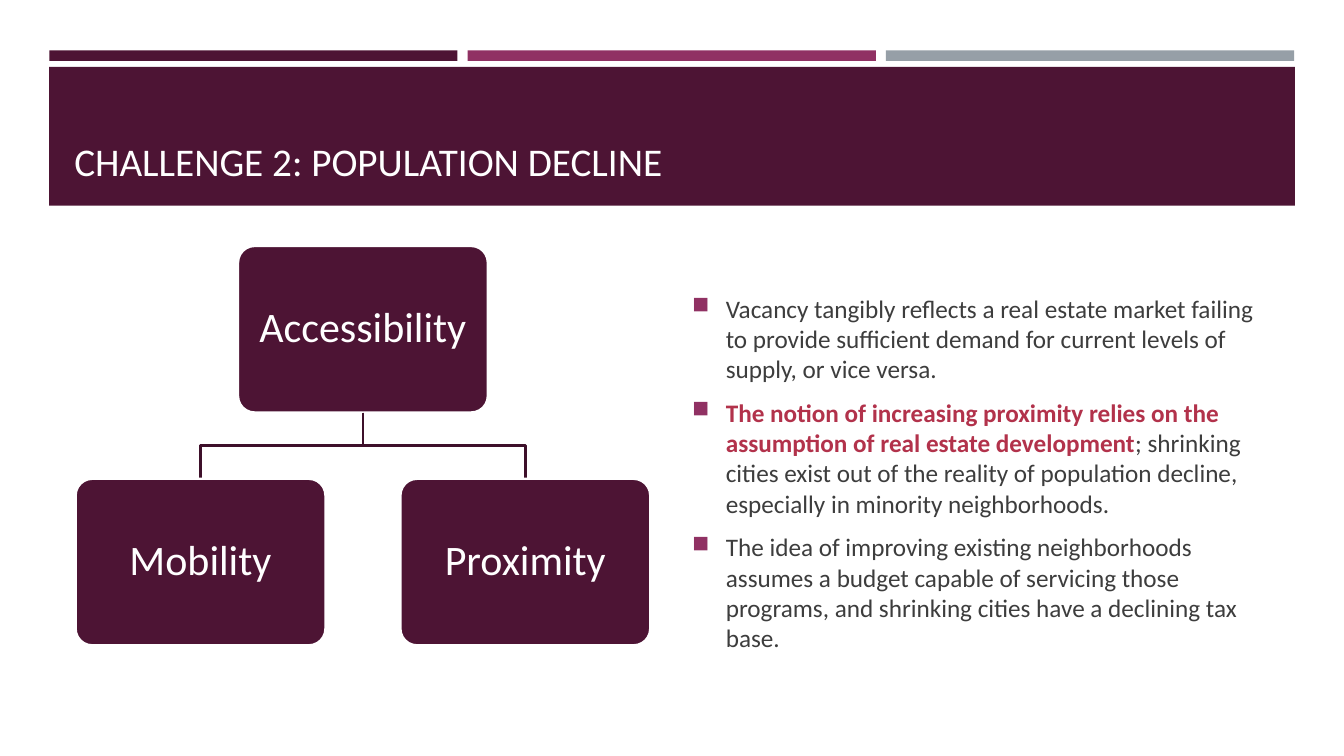
"""Build the population decline slide with its accessibility hierarchy."""

from dataclasses import dataclass

import pptx
import pptx.dml.color
import pptx.enum.shapes
import pptx.enum.text
import pptx.oxml
import pptx.oxml.ns
import pptx.shapes.autoshape
import pptx.slide
import pptx.text.text
import pptx.util

Pt = pptx.util.Pt
Align = pptx.enum.text.PP_ALIGN
Anchor = pptx.enum.text.MSO_ANCHOR
Preset = pptx.enum.shapes.MSO_SHAPE


@dataclass(frozen=True)
class Theme:
    font: str = "Calibri"
    plum: str = "4D1434"
    magenta: str = "903163"
    gray: str = "969FA7"
    link: str = "3E102A"
    white: str = "FFFFFF"
    body: str = "3D3D3D"
    emphasis: str = "B2324B"
    title_size: float = 28
    node_size: float = 30
    body_size: float = 18
    outline: float = 1.75


@dataclass(frozen=True)
class Box:
    left: float
    top: float
    width: float
    height: float

    @property
    def center(self) -> float:
        return self.left + self.width / 2

    @property
    def bottom(self) -> float:
        return self.top + self.height

    def lengths(self) -> tuple[int, ...]:
        return Pt(self.left), Pt(self.top), Pt(self.width), Pt(self.height)


@dataclass(frozen=True)
class Node:
    label: str
    left: float
    top: float

    @property
    def box(self) -> Box:
        return Box(self.left, self.top, 178.5, 119)


@dataclass(frozen=True)
class Phrase:
    text: str
    emphasized: bool = False


THEME = Theme()
BAR_STEP = 301.5 - 2.7
ACCESSIBILITY = Node("Accessibility", 170, 175.7)
CHILDREN = (Node("Mobility", 54, 342), Node("Proximity", 286, 342))
ARGUMENTS = (
    (Phrase("Vacancy tangibly reflects a real estate market failing to provide "
            "sufficient demand for current levels of supply, or vice versa."),),
    (Phrase("The notion of increasing proximity relies on the assumption of "
            "real estate development", True),
     Phrase("; shrinking cities exist out of the reality of population decline, "
            "especially in minority neighborhoods.")),
    (Phrase("The idea of improving existing neighborhoods assumes a budget capable "
            "of servicing those programs, and shrinking cities have a declining "
            "tax base."),),
)


def rgb(color: str) -> pptx.dml.color.RGBColor:
    """Convert a hex colour."""
    return pptx.dml.color.RGBColor.from_string(color)


def add_run(paragraph: pptx.text.text._Paragraph, text: str, size: float,
            color: str, bold: bool = False) -> None:
    """Append one styled run."""
    run = paragraph.add_run()
    run.text = text
    run.font.name = THEME.font
    run.font.size = Pt(size)
    run.font.bold = bold
    run.font.color.rgb = rgb(color)


def add_block(slide: pptx.slide.Slide, preset: Preset, box: Box,
              color: str) -> pptx.shapes.autoshape.Shape:
    """Add a filled shape without outline or shadow."""
    block = slide.shapes.add_shape(preset, *box.lengths())
    block.shadow.inherit = False
    block.fill.solid()
    block.fill.fore_color.rgb = rgb(color)
    block.line.fill.background()
    return block


def add_text_area(slide: pptx.slide.Slide, box: Box,
                  anchor: Anchor) -> pptx.text.text.TextFrame:
    """Add a wrapping text box and return its frame."""
    frame = slide.shapes.add_textbox(*box.lengths()).text_frame
    frame.word_wrap = True
    frame.vertical_anchor = anchor
    return frame


def add_node(slide: pptx.slide.Slide, node: Node) -> None:
    """Add a labelled rounded box of the hierarchy."""
    block = add_block(slide, Preset.ROUNDED_RECTANGLE, node.box, THEME.plum)
    block.adjustments[0] = 0.1
    block.line.color.rgb = rgb(THEME.white)
    block.line.width = Pt(THEME.outline)
    frame = block.text_frame
    frame.word_wrap = True
    frame.vertical_anchor = Anchor.MIDDLE
    frame.margin_left = frame.margin_right = Pt(8.6)
    frame.margin_top = frame.margin_bottom = Pt(8.6)
    label = frame.paragraphs[0]
    label.alignment = Align.CENTER
    label.line_spacing = 0.9
    add_run(label, node.label, THEME.node_size, THEME.white)


def add_branch(slide: pptx.slide.Slide, parent: Box, child: Box) -> None:
    """Draw the bent line from a parent down to a child."""
    middle = (parent.bottom + child.top) / 2
    builder = slide.shapes.build_freeform(Pt(parent.center), Pt(parent.bottom))
    corners = ((parent.center, middle), (child.center, middle),
               (child.center, child.top))
    builder.add_line_segments([(Pt(x), Pt(y)) for x, y in corners], close=False)
    branch = builder.convert_to_shape()
    branch.shadow.inherit = False
    branch.fill.background()
    branch.line.color.rgb = rgb(THEME.link)
    branch.line.width = Pt(THEME.outline)


def add_bullet(paragraph: pptx.text.text._Paragraph) -> None:
    """Give a paragraph a coloured square bullet with a hanging indent."""
    properties = paragraph._p.get_or_add_pPr()
    properties.set("marL", str(Pt(24)))
    properties.set("indent", str(Pt(-24)))
    namespace = pptx.oxml.ns.nsdecls("a")
    for markup in (
        f'<a:buClr {namespace}><a:srgbClr val="{THEME.magenta}"/></a:buClr>',
        f'<a:buSzPct {namespace} val="92000"/>',
        f'<a:buChar {namespace} char="■"/>',
    ):
        properties.append(pptx.oxml.parse_xml(markup))


def add_arguments(slide: pptx.slide.Slide) -> None:
    """Add the bulleted arguments."""
    frame = add_text_area(slide, Box(487.4, 167.8, 427, 340), Anchor.MIDDLE)
    for index, phrases in enumerate(ARGUMENTS):
        argument = frame.add_paragraph() if index else frame.paragraphs[0]
        argument.space_before = Pt(3.6)
        argument.space_after = Pt(6)
        add_bullet(argument)
        for phrase in phrases:
            color = THEME.emphasis if phrase.emphasized else THEME.body
            add_run(argument, phrase.text, THEME.body_size, color, phrase.emphasized)


def main() -> None:
    """Assemble and save the slide."""
    deck = pptx.Presentation()
    deck.slide_width, deck.slide_height = Pt(960), Pt(540)
    slide = deck.slides.add_slide(deck.slide_layouts[6])
    for index, color in enumerate((THEME.plum, THEME.magenta, THEME.gray)):
        bar = Box(35.2 + index * BAR_STEP, 36, 291.6, 7.5)
        add_block(slide, Preset.RECTANGLE, bar, color)
    add_block(slide, Preset.RECTANGLE, Box(35.2, 47.7, 889.8, 99.2), THEME.plum)
    title = add_text_area(slide, Box(46, 57.6, 868.4, 77.8), Anchor.BOTTOM)
    add_run(title.paragraphs[0], "CHALLENGE 2: POPULATION DECLINE",
            THEME.title_size, THEME.white)
    add_arguments(slide)
    add_node(slide, ACCESSIBILITY)
    for child in CHILDREN:
        add_branch(slide, ACCESSIBILITY.box, child.box)
        add_node(slide, child)
    deck.save("out.pptx")


if __name__ == "__main__":
    main()
